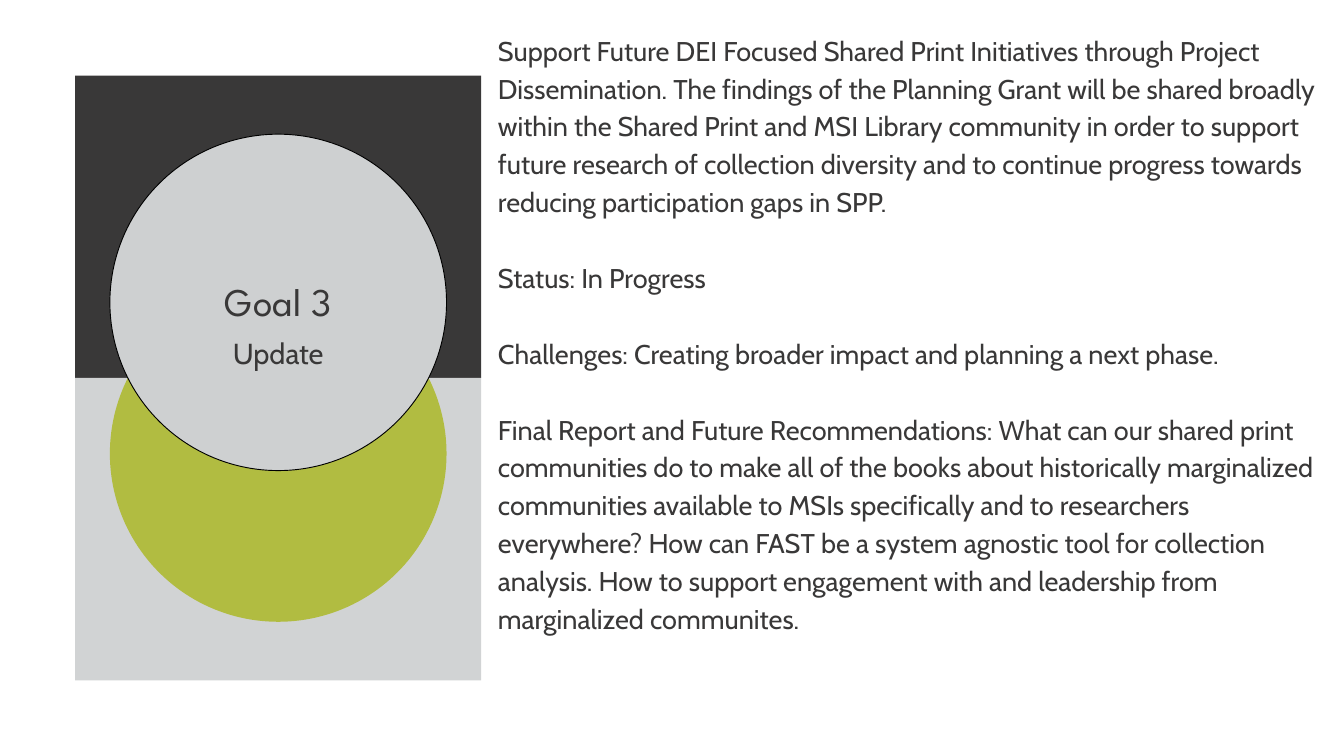
import pptx
import pptx.util
import pptx.dml.color
import pptx.enum.shapes
import pptx.enum.text

RGB = pptx.dml.color.RGBColor
DARK = RGB(0x39, 0x38, 0x38)
PALE = RGB(0xD1, 0xD3, 0xD4)
GREEN = RGB(0xB1, 0xBC, 0x41)
GREY = RGB(0xCE, 0xD0, 0xD1)
BLACK = RGB(0, 0, 0)

Pt = pptx.util.Pt
KIND = pptx.enum.shapes.MSO_SHAPE
ALIGN = pptx.enum.text.PP_ALIGN

COLS, ROWS = 20, 10
LEAD = 1.4

GOAL = [
    "Support Future DEI Focused Shared Print Initiatives through Project "
    "Dissemination. The findings of the Planning Grant will be shared broadly "
    "within the Shared Print and MSI Library community in order to support "
    "future research of collection diversity and to continue progress towards "
    "reducing participation gaps in SPP.",
    "Status: In Progress",
    "Challenges: Creating broader impact and planning a next phase.",
    "Final Report and Future Recommendations: What can our shared print "
    "communities do to make all of the books about historically marginalized "
    "communities available to MSIs specifically and to researchers everywhere? "
    "How can FAST be a system agnostic tool for collection analysis. How to "
    "support engagement with and leadership from marginalized communites.",
]


class Board:
    """Draws styled elements on one slide, placed by column and row."""

    def __init__(self, deck):
        self.wide = deck.slide_width / COLS
        self.high = deck.slide_height / ROWS
        self.slide = deck.slides.add_slide(deck.slide_layouts[6])

    def box(self, col, row, cols, rows):
        return (round(col * self.wide), round(row * self.high),
                round(cols * self.wide), round(rows * self.high))

    def shape(self, kind, area, fill, line=None):
        item = self.slide.shapes.add_shape(kind, *self.box(*area))
        item.shadow.inherit = False
        item.fill.solid()
        item.fill.fore_color.rgb = fill
        if line is None:
            item.line.fill.background()
        else:
            item.line.color.rgb = line
            item.line.width = Pt(1)

    def text(self, area, lines, font, size, align=ALIGN.LEFT):
        frame = self.slide.shapes.add_textbox(*self.box(*area)).text_frame
        edges = ("left", "top", "right", "bottom")
        form = {f"margin_{edge}": 0 for edge in edges}
        form["word_wrap"] = True
        for name, value in form.items():
            setattr(frame, name, value)
        lead = Pt(size * LEAD)
        for spot, line in enumerate(lines):
            para = frame.add_paragraph() if spot else frame.paragraphs[0]
            form = {"alignment": align, "line_spacing": lead,
                    "space_before": lead if spot else Pt(0)}
            for name, value in form.items():
                setattr(para, name, value)
            run = para.add_run()
            run.text = line
            for name, value in {"name": font, "size": Pt(size)}.items():
                setattr(run.font, name, value)
            run.font.color.rgb = DARK


def main():
    deck = pptx.Presentation()
    deck.slide_width = pptx.util.Inches(20)
    deck.slide_height = pptx.util.Inches(11.25)
    board = Board(deck)

    left, span = 1.12, 6.04
    ring, tall = 5.01, 4.45
    inset = left + (span - ring) / 2

    for row, fill in ((1, DARK), (5, PALE)):
        board.shape(KIND.RECTANGLE, (left, row, span, 4), fill)
    for mid, fill, line in ((6, GREEN, None), (4, GREY, BLACK)):
        area = (inset, mid - tall / 2, ring, tall)
        board.shape(KIND.OVAL, area, fill, line)

    board.text((inset, 3.57, ring, 0.7), ["Goal 3"],
               "League Spartan", 42, ALIGN.CENTER)
    board.text((inset, 4.36, ring, 0.5), ["Update"],
               "Cabin", 31, ALIGN.CENTER)
    board.text((7.41, 0.38, 12.38, 9.32), GOAL, "Cabin", 29)

    deck.save("out.pptx")


if __name__ == "__main__":
    main()
